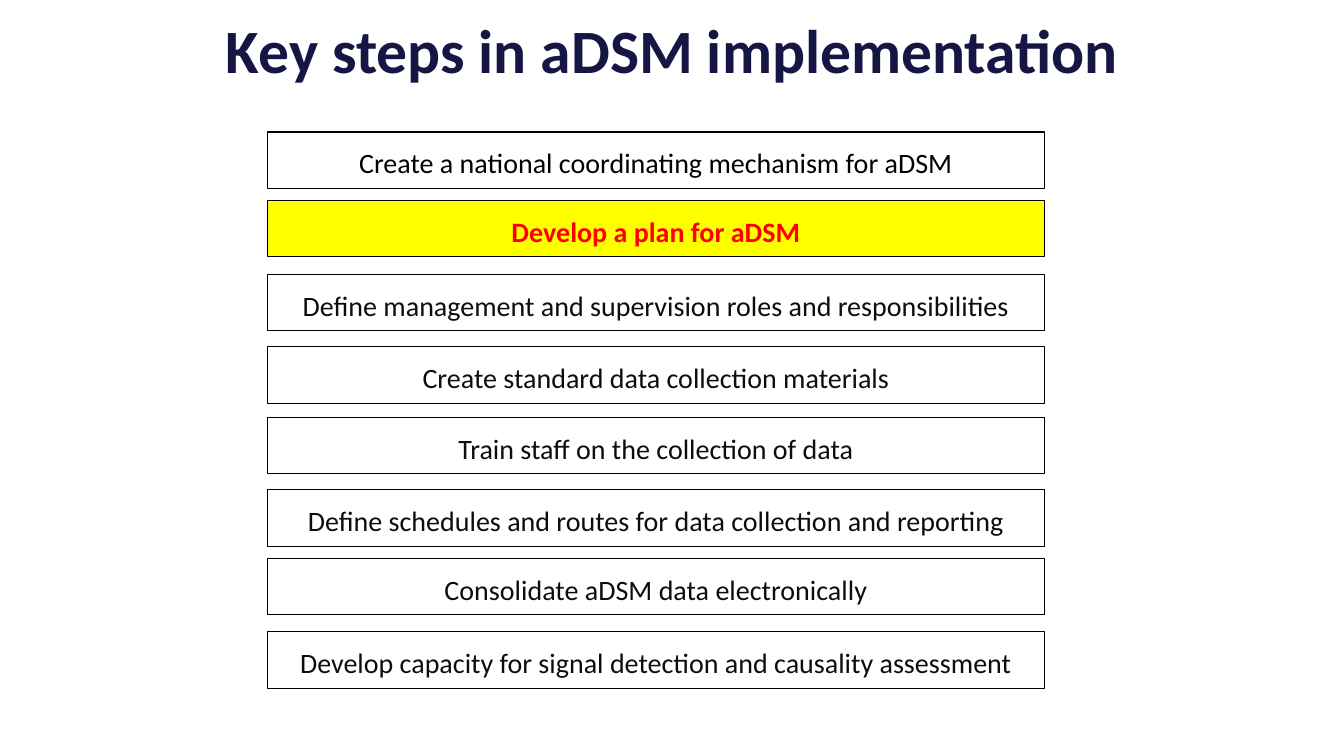
from pptx import Presentation
from pptx.dml.color import RGBColor
from pptx.enum.shapes import MSO_SHAPE
from pptx.enum.text import MSO_ANCHOR, PP_ALIGN
from pptx.util import Inches, Pt

# Content
TITLE = "Key steps in aDSM implementation"
BLACK, DARK, WHITE = "000000", "0D0D0D", "FFFFFF"
# top, text, text colour, fill, bold
STEPS = [
    (1.31, "Create a national coordinating mechanism for aDSM", BLACK, None, False),
    (1.99, "Develop a plan for aDSM", "FF0000", "FFFF00", True),
    (2.72, "Define management and supervision roles and responsibilities", DARK, WHITE, False),
    (3.44, "Create standard data collection materials", DARK, WHITE, False),
    (4.14, "Train staff on the collection of data", DARK, WHITE, False),
    (4.86, "Define schedules and routes for data collection and reporting", DARK, WHITE, False),
    (5.54, "Consolidate aDSM data electronically", DARK, WHITE, False),
    (6.27, "Develop capacity for signal detection and causality assessment", DARK, WHITE, False),
]
LEFT, WIDTH, HEIGHT = 2.65, 7.71, 0.56


def paint(target, color):
    target.rgb = RGBColor.from_string(color)


def write(shape, text, size, color, bold):
    frame = shape.text_frame
    frame.word_wrap = True
    frame.vertical_anchor = MSO_ANCHOR.MIDDLE
    para = frame.paragraphs[0]
    para.alignment = PP_ALIGN.CENTER
    run = para.add_run()
    run.text = text
    run.font.name = "Calibri"
    run.font.size = Pt(size)
    run.font.bold = bold
    paint(run.font.color, color)
    return para


def add_step(slide, top, text, color, fill, bold):
    box = slide.shapes.add_shape(
        MSO_SHAPE.RECTANGLE, Inches(LEFT), Inches(top), Inches(WIDTH), Inches(HEIGHT))
    box.shadow.inherit = False
    if fill:
        box.fill.solid()
        paint(box.fill.fore_color, fill)
    else:
        box.fill.background()
    paint(box.line.color, BLACK)
    box.line.width = Pt(0.75)
    para = write(box, text, 20, color, bold)
    para.line_spacing = 1.15
    para.space_after = Pt(10)


def main():
    deck = Presentation()
    deck.slide_width, deck.slide_height = Inches(13.33), Inches(7.5)
    slide = deck.slides.add_slide(deck.slide_layouts[6])

    # Title
    head = slide.shapes.add_textbox(Inches(2.1), Inches(0.05), Inches(9.14), Inches(0.87))
    write(head, TITLE, 44, "161645", True)

    # Steps
    for step in STEPS:
        add_step(slide, *step)

    deck.save("out.pptx")


if __name__ == "__main__":
    main()
